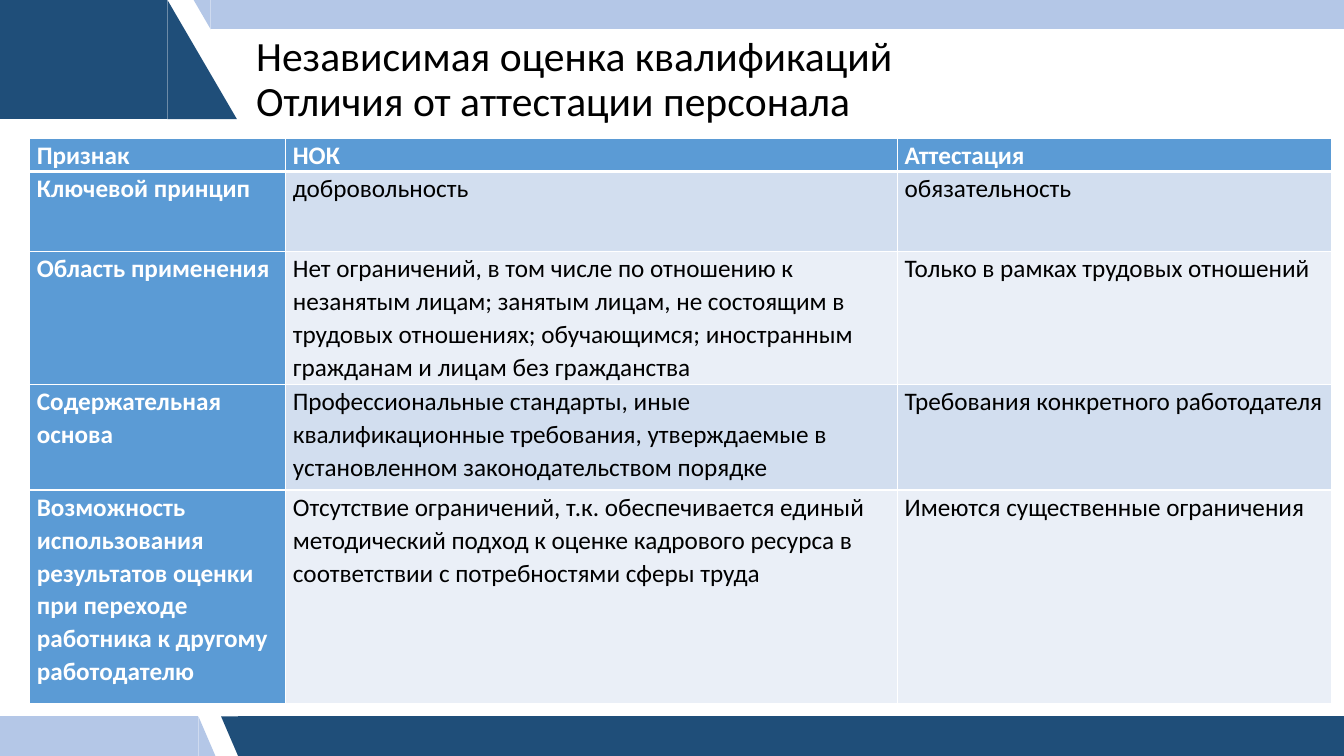
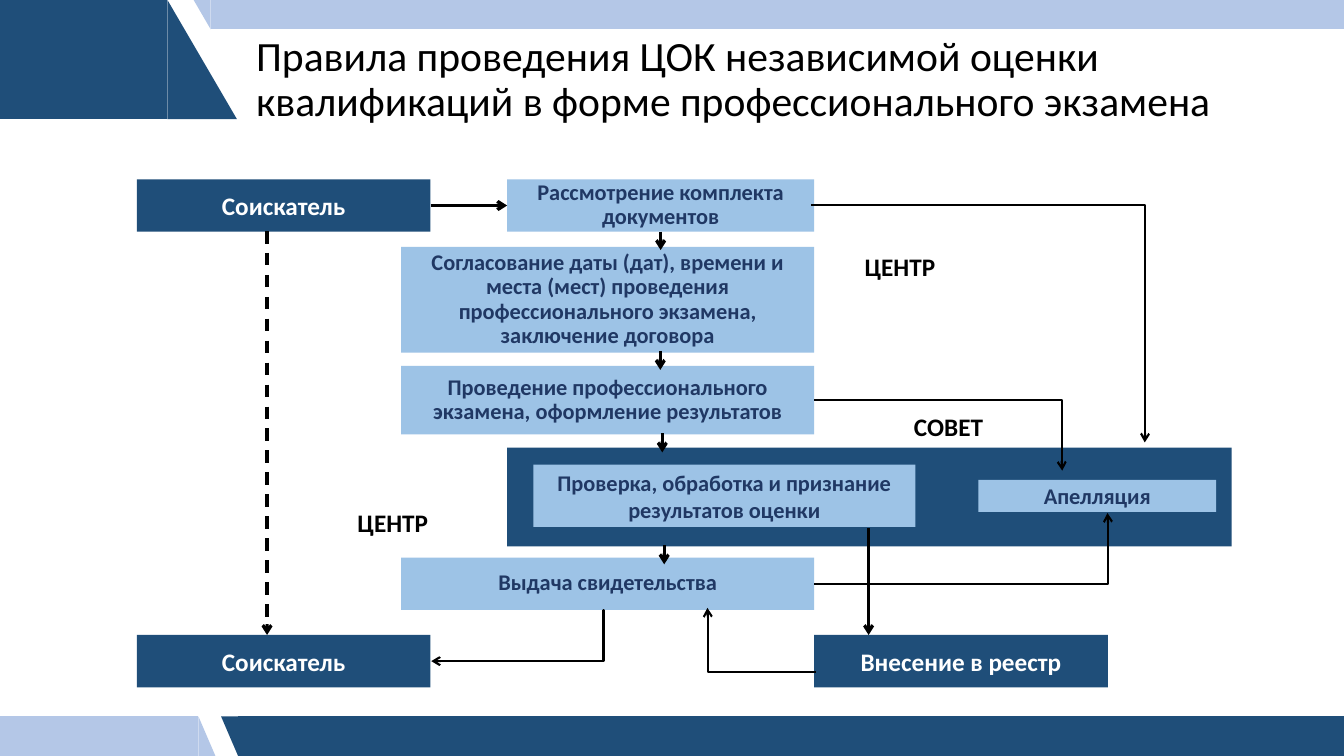
"""Builds two slides on the independent assessment of qualifications."""
from dataclasses import dataclass
from typing import NamedTuple, Optional

from lxml import etree
from pptx import Presentation
from pptx import util as u
from pptx.dml.color import RGBColor
from pptx.enum import dml, shapes, text
from pptx.oxml.ns import qn

NAVY = RGBColor(0x1F, 0x4E, 0x79)
PERIWINKLE = RGBColor(0xB4, 0xC7, 0xE7)
SKY = RGBColor(0x9D, 0xC3, 0xE6)
INK = RGBColor(0x20, 0x38, 0x64)
HEADER_BLUE = RGBColor(0x5B, 0x9B, 0xD5)
STRIPES = (RGBColor(0xD2, 0xDE, 0xEF), RGBColor(0xEA, 0xEF, 0xF7))
WHITE = RGBColor(0xFF, 0xFF, 0xFF)
BLACK = RGBColor(0, 0, 0)
FONT = "Calibri"
BAR = shapes.MSO_SHAPE.FLOWCHART_PROCESS
WEDGE = shapes.MSO_SHAPE.RIGHT_TRIANGLE
RECTANGLE = shapes.MSO_SHAPE.RECTANGLE


class Frame(NamedTuple):
    """Left, top, width and height in centimetres."""
    left: float
    top: float
    width: float
    height: float

    def lengths(self) -> list:
        return [u.Cm(value) for value in self]


class Band(NamedTuple):
    """A piece of the decoration shared by all slides."""
    kind: shapes.MSO_SHAPE
    frame: Frame
    fill: RGBColor
    rotation: int = 0


@dataclass(frozen=True)
class Step:
    """A box of the flow chart."""
    frame: Frame
    caption: str = ""
    dark: bool = False
    spacing: Optional[float] = None


@dataclass(frozen=True)
class Arrow:
    """An arrow in centimetres, an elbow when it has a bend."""
    start: tuple[float, float]
    end: tuple[float, float]
    bend: Optional[int] = None
    dashed: bool = False


TITLE_FRAME = Frame(6.2, 0.79, 25.43, 2.46)
BANDS = (
    Band(BAR, Frame(6, 18.05, 27.87, 1), NAVY, 180),
    Band(WEDGE, Frame(5.57, 18.05, 0.43, 1), NAVY, 180),
    Band(BAR, Frame(0, 18.05, 5, 1), PERIWINKLE),
    Band(WEDGE, Frame(5, 18.05, 0.43, 1), PERIWINKLE),
    Band(BAR, Frame(5.31, 0, 28.56, 0.74), PERIWINKLE, 180),
    Band(WEDGE, Frame(4.88, 0, 0.43, 0.74), PERIWINKLE, 180),
    Band(BAR, Frame(0, 0, 4.22, 3), NAVY),
    Band(WEDGE, Frame(4.22, 0, 1.75, 3), NAVY),
)

TABLE_FRAME = Frame(0.75, 3.49, 32.82, 14.05)
COLUMN_WIDTHS = (6.45, 15.42, 10.95)
ROW_HEIGHTS = (0.64, 2.01, 3.35, 2.67, 5.38)
ROWS = (
    ("Признак", "НОК", "Аттестация"),
    ("Ключевой принцип", "добровольность", "обязательность"),
    ("Область применения",
     "Нет ограничений, в том числе по отношению к незанятым лицам; занятым лицам, "
     "не состоящим в трудовых отношениях; обучающимся; иностранным гражданам "
     "и лицам без гражданства",
     "Только в рамках трудовых отношений"),
    ("Содержательная\nоснова",
     "Профессиональные стандарты, иные квалификационные требования, "
     "утверждаемые в установленном законодательством порядке",
     "Требования конкретного работодателя"),
    ("Возможность использования результатов оценки при переходе работника "
     "к другому работодателю",
     "Отсутствие ограничений, т.к. обеспечивается единый методический подход "
     "к оценке кадрового ресурса в соответствии с потребностями сферы труда",
     "Имеются существенные ограничения"),
)

APPLICANT = Step(Frame(3.45, 4.52, 7.4, 1.32), "Соискатель", dark=True)
DOCUMENTS = Step(Frame(12.78, 4.52, 7.74, 1.32), "Рассмотрение комплекта документов", spacing=0.9)
STEPS = (
    Step(Frame(10.11, 6.22, 10.41, 2.67),
         "Согласование даты (дат), времени и места (мест) проведения "
         "профессионального экзамена, заключение договора", spacing=0.9),
    Step(Frame(10.11, 9.22, 10.41, 1.73),
         "Проведение профессионального экзамена, оформление результатов", spacing=0.9),
    Step(Frame(10.11, 14.05, 10.41, 1.32), "Выдача свидетельства", spacing=0.9),
    Step(Frame(12.78, 11.28, 18.26, 2.49), dark=True),
    Step(Frame(13.44, 11.71, 9.63, 1.57), "Проверка, обработка и признание результатов оценки"),
    Step(Frame(24.66, 12.09, 5.99, 0.81), "Апелляция"),
    Step(Frame(3.45, 16, 7.4, 1.32), "Соискатель", dark=True),
    Step(Frame(20.52, 16, 7.4, 1.32), "Внесение в реестр", dark=True),
)
LABELS = (
    ("ЦЕНТР", Frame(8.76, 12.65, 2.69, 1.02)),
    ("ЦЕНТР", Frame(21.54, 6.22, 2.69, 1.02)),
    ("СОВЕТ", Frame(22.78, 10.24, 2.69, 1.02)),
)
FIRST_ARROW = Arrow((10.85, 5.18), (12.78, 5.18))
REVIEWED_ARROW = Arrow((16.65, 5.84), (16.65, 6.3))
ARROWS = (
    Arrow((16.64, 8.84), (16.64, 9.32)),
    Arrow((16.69, 10.92), (16.69, 11.4)),
    Arrow((16.74, 13.74), (16.74, 14.22)),
    Arrow((21.89, 13.31), (21.89, 16)),
    Arrow((6.73, 5.82), (6.73, 16), dashed=True),
    Arrow((15.19, 15.37), (10.87, 16.66), bend=-500),
    Arrow((20.57, 16.94), (17.83, 15.32), bend=99600),
    Arrow((20.52, 14.71), (27.91, 12.93), bend=100200),
    Arrow((20.45, 5.16), (28.85, 11.15), bend=100100),
    Arrow((20.52, 10.08), (26.77, 11.86), bend=99800),
)


def write(frame, words: str, size: float, color: RGBColor, bold: bool = False,
          align=text.PP_ALIGN.LEFT, spacing: Optional[float] = None) -> None:
    """Fill a text frame and format all of its runs."""
    frame.word_wrap = True
    frame.text = words
    for para in frame.paragraphs:
        para.alignment = align
        para.line_spacing = spacing
        for span in para.runs:
            span.font.name = FONT
            span.font.size = u.Pt(size)
            span.font.bold = bold
            span.font.color.rgb = color


def add_block(page, kind, frame: Frame, fill: RGBColor):
    """Add a flat filled shape without outline."""
    box = page.shapes.add_shape(kind, *frame.lengths())
    box.shadow.inherit = False
    box.fill.solid()
    box.fill.fore_color.rgb = fill
    box.line.fill.background()
    return box


def add_page(deck, title: str):
    """Add a title-only slide with its formatted title."""
    page = deck.slides.add_slide(deck.slide_layouts[5])
    box = page.shapes.title
    box.left, box.top, box.width, box.height = TITLE_FRAME.lengths()
    box.text_frame.auto_size = text.MSO_AUTO_SIZE.NONE
    box.text_frame.vertical_anchor = text.MSO_ANCHOR.MIDDLE
    write(box.text_frame, title, 29.7, BLACK, spacing=0.9)
    return page


def decorate_layout(page) -> None:
    """Draw the bands and move them behind the placeholders of the layout."""
    layout = page.slide_layout
    for holder in list(layout.placeholders)[1:]:
        layout.shapes.element.remove(holder.element)
    for index, band in enumerate(BANDS):
        box = add_block(page, band.kind, band.frame, band.fill)
        box.rotation = band.rotation
        layout.shapes.element.insert(2 + index, box.element)


def add_borders(cell, bottom: float) -> None:
    """Give a cell white borders of one point, and its own bottom width."""
    properties = cell._tc.get_or_add_tcPr()
    for index, (side, width) in enumerate((("L", 1), ("R", 1), ("T", 1), ("B", bottom))):
        line = etree.Element(qn(f"a:ln{side}"), w=str(u.Pt(width)))
        fill = etree.SubElement(line, qn("a:solidFill"))
        etree.SubElement(fill, qn("a:srgbClr"), val=str(WHITE))
        properties.insert(index, line)


def add_comparison(page) -> None:
    """Add the comparison table."""
    table = page.shapes.add_table(len(ROWS), len(COLUMN_WIDTHS), *TABLE_FRAME.lengths()).table
    table.first_col = True
    for column, width in zip(table.columns, COLUMN_WIDTHS):
        column.width = u.Cm(width)
    for row_index, (words, height) in enumerate(zip(ROWS, ROW_HEIGHTS)):
        table.rows[row_index].height = u.Cm(height)
        for column_index, word in enumerate(words):
            cell = table.cell(row_index, column_index)
            heading = row_index == 0 or column_index == 0
            cell.margin_left = cell.margin_right = u.Cm(0.18)
            cell.margin_top = cell.margin_bottom = 0
            cell.fill.solid()
            cell.fill.fore_color.rgb = HEADER_BLUE if heading else STRIPES[(row_index - 1) % 2]
            write(cell.text_frame, word, 18, WHITE if heading else BLACK, heading, spacing=1.07)
            add_borders(cell, 3 if row_index == 0 else 1)


def add_step(page, step: Step):
    """Add a box of the flow chart."""
    box = add_block(page, RECTANGLE, step.frame, NAVY if step.dark else SKY)
    if step.caption:
        size, color = (18, WHITE) if step.dark else (16, INK)
        box.text_frame.vertical_anchor = text.MSO_ANCHOR.MIDDLE
        write(box.text_frame, step.caption, size, color, True, text.PP_ALIGN.CENTER, step.spacing)
    return box


def add_arrow(page, arrow: Arrow):
    """Add a straight or elbow arrow."""
    straight = arrow.bend is None
    kind = shapes.MSO_CONNECTOR.STRAIGHT if straight else shapes.MSO_CONNECTOR.ELBOW
    points = [u.Cm(value) for value in arrow.start + arrow.end]
    connector = page.shapes.add_connector(kind, *points)
    connector.line.color.rgb = BLACK
    connector.line.width = u.Pt(2.25 if straight else 1.5)
    if arrow.dashed:
        connector.line.dash_style = dml.MSO_LINE.DASH
    properties = connector.element.spPr
    etree.SubElement(properties.find(qn("a:ln")), qn("a:tailEnd"), type="arrow")
    etree.SubElement(properties, qn("a:effectLst"))
    if not straight:
        geometry = properties.find(qn("a:prstGeom"))
        adjustments = geometry.find(qn("a:avLst"))
        if adjustments is None:
            adjustments = etree.SubElement(geometry, qn("a:avLst"))
        etree.SubElement(adjustments, qn("a:gd"), name="adj1", fmla=f"val {arrow.bend}")
    return connector


def add_flow(page) -> None:
    """Add the boxes, labels and arrows of the examination procedure."""
    applicant = add_step(page, APPLICANT)
    documents = add_step(page, DOCUMENTS)
    for step in STEPS:
        add_step(page, step)
    for words, frame in LABELS:
        box = page.shapes.add_textbox(*frame.lengths())
        write(box.text_frame, words, 18, BLACK, True)
    submission = add_arrow(page, FIRST_ARROW)
    submission.begin_connect(applicant, 3)
    submission.end_connect(documents, 1)
    add_arrow(page, REVIEWED_ARROW).begin_connect(documents, 2)
    for arrow in ARROWS:
        add_arrow(page, arrow)


def main() -> None:
    """Build and save the deck."""
    deck = Presentation()
    deck.slide_width, deck.slide_height = u.Cm(33.87), u.Cm(19.05)
    comparison = add_page(deck, "Независимая оценка квалификаций\vОтличия от аттестации персонала")
    decorate_layout(comparison)
    add_comparison(comparison)
    procedure = add_page(deck, "Правила проведения ЦОК независимой оценки "
                               "квалификаций в форме профессионального экзамена")
    add_flow(procedure)
    deck.save("out.pptx")


if __name__ == "__main__":
    main()
